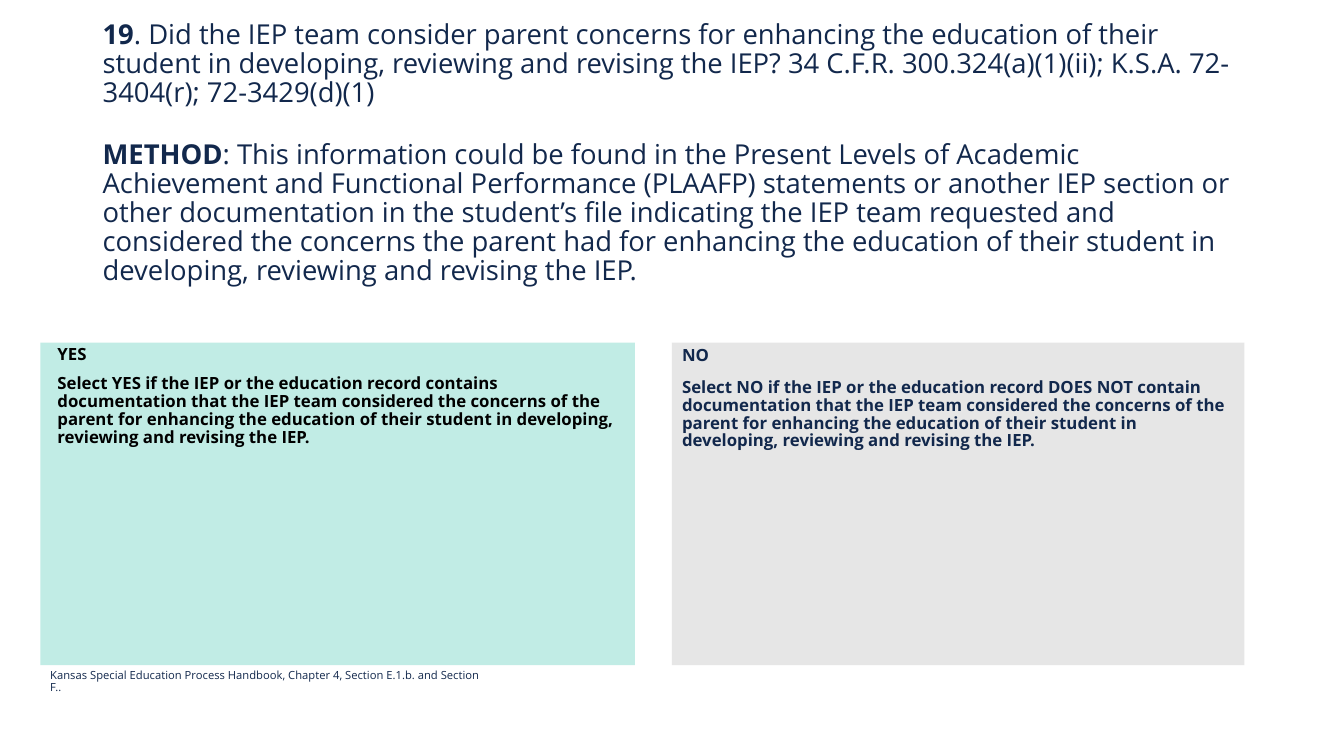
from pptx import Presentation
from pptx.dml.color import RGBColor
from pptx.enum.shapes import MSO_SHAPE
from pptx.enum.text import MSO_ANCHOR, PP_ALIGN
from pptx.util import Inches, Pt

NAVY = RGBColor(0x12, 0x28, 0x4C)
BLACK = RGBColor(0x00, 0x00, 0x00)
MINT = RGBColor(0xC1, 0xEC, 0xE5)
GREY = RGBColor(0xE6, 0xE6, 0xE6)

QUESTION = [
    ("19", ". Did the IEP team consider parent concerns for enhancing the education of their "
           "student in developing, reviewing and revising the IEP? 34 C.F.R. 300.324(a)(1)(ii); "
           "K.S.A. 72-3404(r); 72-3429(d)(1)"),
    ("METHOD", ": This information could be found in the Present Levels of Academic Achievement "
               "and Functional Performance (PLAAFP) statements or another IEP section or other "
               "documentation in the student’s file indicating the IEP team requested and "
               "considered the concerns the parent had for enhancing the education of their "
               "student in developing, reviewing and revising the IEP."),
]
ANSWER = ("Select {} if the IEP or the education record {} documentation that the IEP team "
          "considered the concerns of the parent for enhancing the education of their student "
          "in developing, reviewing and revising the IEP.")
SOURCE = "Kansas Special Education Process Handbook, Chapter 4, Section E.1.b. and Section F.."


class ReviewSlide:
    font_name = "Open Sans"
    line_spacing = 0.88

    def __init__(self, deck):
        self.column = deck.slide_width / 100
        self.row = deck.slide_height / 100
        self.page = deck.slides.add_slide(deck.slide_layouts[6])

    def place(self, left, top, width, height):
        return (round(left * self.column), round(top * self.row),
                round(width * self.column), round(height * self.row))

    def fill_text(self, frame, paragraphs, size, color, gap=0, bold=None):
        frame.word_wrap = True
        frame.vertical_anchor = MSO_ANCHOR.TOP
        for index, spans in enumerate(paragraphs):
            para = frame.add_paragraph() if index else frame.paragraphs[0]
            para.alignment = PP_ALIGN.LEFT
            para.line_spacing = self.line_spacing
            para.space_before = Pt(gap if index else 0)
            para.font.name = self.font_name
            para.font.size = Pt(size)
            para.font.color.rgb = color
            para.font.bold = bold
            for text, strong in spans:
                span = para.add_run()
                span.text = text
                if strong:
                    span.font.bold = True

    def text(self, area, paragraphs, size, gap=0):
        box = self.page.shapes.add_textbox(*self.place(*area))
        self.fill_text(box.text_frame, paragraphs, size, NAVY, gap)

    def panel(self, area, fill, color, lines, gap, insets):
        box = self.page.shapes.add_shape(MSO_SHAPE.RECTANGLE, *self.place(*area))
        box.shadow.inherit = False
        box.fill.solid()
        box.fill.fore_color.rgb = fill
        box.line.fill.background()
        frame = box.text_frame
        left, top, right = insets
        frame.margin_left = round(left * self.column)
        frame.margin_top = round(top * self.row)
        frame.margin_right = round(right * self.column)
        self.fill_text(frame, [[(line, False)] for line in lines], 12, color, gap, True)


def main():
    deck = Presentation()
    deck.slide_width, deck.slide_height = Inches(13.33), Inches(7.5)
    slide = ReviewSlide(deck)

    question = [[(label, True), (text, False)] for label, text in QUESTION]
    slide.text((6.9, 2.13, 86.25, 43.07), question, 19.6, 23.6)

    panel_top, panel_height = 45.33, 42.67
    slide.panel((3, panel_top, 44.25, panel_height), MINT, BLACK,
                ["YES", ANSWER.format("YES", "contains")], 8, (1.28, 0.53, 0.53))
    slide.panel((50, panel_top, 42.6, panel_height), GREY, NAVY,
                ["NO", ANSWER.format("NO", "DOES NOT contain")], 10, (0.75, 0.67, 0.75))

    slide.text((3, panel_top + panel_height, 33.7, 3.2), [[(SOURCE, False)]], 8)
    deck.save("out.pptx")


if __name__ == "__main__":
    main()
